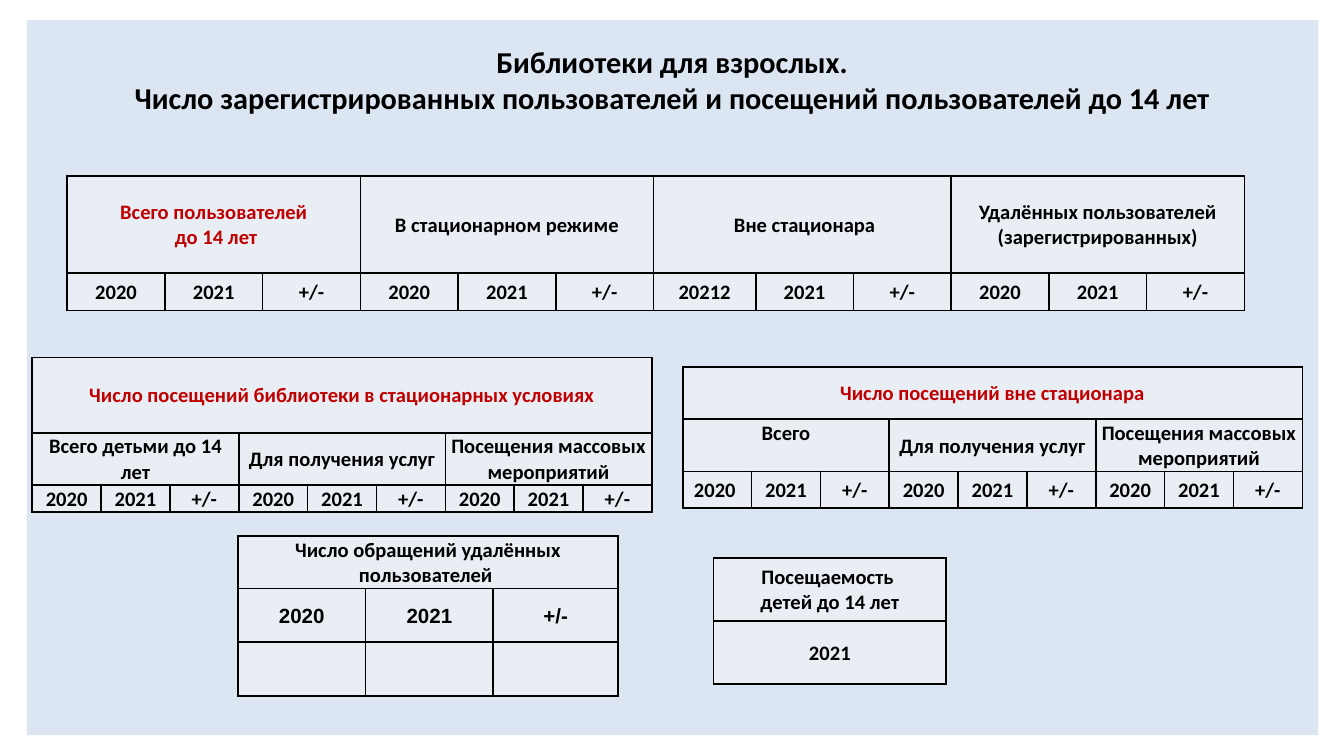
from lxml.etree import SubElement
from pptx import Presentation
from pptx.dml.color import RGBColor
from pptx.enum.shapes import MSO_SHAPE as SHAPE
from pptx.enum.text import MSO_ANCHOR as ANCHOR, MSO_AUTO_SIZE as AUTO, PP_ALIGN as ALIGN
from pptx.oxml.ns import qn
from pptx.util import Inches, Pt

WIDTH = 10
HEIGHT = WIDTH * 9 / 16
BLACK, RED, PANEL, CELL = "000000", "C00000", "DCE6F2", "E9EDF4"
TITLE = (" Библиотеки для взрослых. \v"
         "Число зарегистрированных пользователей и посещений пользователей до 14 лет")
YEARS = ["2020", "2021", "+/-"]
SERVICES = ["Для получения услуг", "Посещения массовых мероприятий"]

# A row with fewer entries than columns is spread over equal merged spans.
# "red" and "top" hold the (row, entry) places with that look.
TABLES = [
    {"at": (0.5, 1.31), "heights": (0.72, 0.28),
     "widths": [8 / 11] * 6 + [0.76] + [8 / 11] * 5, "red": {(0, 0)},
     "rows": [["Всего пользователей\n до 14 лет", "В стационарном режиме",
               " Вне стационара", "Удалённых пользователей\n(зарегистрированных)"],
              YEARS * 2 + ["20212"] + YEARS[1:] + YEARS]},
    {"at": (5.31, 4.15), "heights": (0.47, 0.47), "widths": [1.73],
     "rows": [["Посещаемость \nдетей до 14 лет"], ["2021"]]},
    {"at": (0.24, 2.66), "heights": (0.56, 0.39, 0.2),
     "widths": [4.61 / 9] * 9, "red": {(0, 0)},
     "rows": [["Число посещений библиотеки в стационарных условиях"],
              ["Всего детьми до 14 лет"] + SERVICES, YEARS * 3]},
    {"at": (5.08, 2.73), "heights": (0.39, 0.39, 0.27),
     "widths": [4.61 / 9] * 9, "red": {(0, 0)}, "top": {(1, 0)},
     "rows": [["Число посещений вне стационара"], ["Всего"] + SERVICES,
              ["2020 "] + YEARS[1:] + YEARS * 2]},
    {"at": (1.77, 3.99), "heights": (0.38, 0.4, 0.4),
     "widths": [0.95, 0.95, 0.93], "arial_row": 1,
     "rows": [["Число обращений удалённых пользователей "], YEARS, [""] * 3]},
]


def rgb(value):
    return RGBColor.from_string(value)


def paint(target, color):
    target.fill.solid()
    target.fill.fore_color.rgb = rgb(color)


def write(tf, text, size, color=BLACK, font="Calibri"):
    tf.text = text
    for p in tf.paragraphs:
        p.alignment = ALIGN.CENTER
        for r in p.runs:
            for name, value in {"name": font, "size": Pt(size), "bold": True}.items():
                setattr(r.font, name, value)
            r.font.color.rgb = rgb(color)


def style_cell(cell):
    """Draw thin black borders, then set the fill and the margins."""
    tc_pr = cell._tc.get_or_add_tcPr()
    for side in "LRTB":
        ln = SubElement(tc_pr, qn(f"a:ln{side}"), w=str(Pt(1)))
        fill = SubElement(ln, qn("a:solidFill"))
        SubElement(fill, qn("a:srgbClr"), val=BLACK)
    paint(cell, CELL)
    for side in ("left", "right", "top"):
        setattr(cell, f"margin_{side}", Inches(0.01))
    cell.margin_bottom = 0
    cell.vertical_anchor = ANCHOR.MIDDLE


def add_grid(s, at, widths, heights, rows, red=(), top=(), arial_row=None):
    size = sum(widths), sum(heights)
    table = s.shapes.add_table(len(rows), len(widths),
                               *map(Inches, at + size)).table
    table.first_row = table.horz_banding = False
    for col, width in zip(table.columns, widths):
        col.width = Inches(width)
    for row, height in zip(table.rows, heights):
        row.height = Inches(height)
    for cell in table.iter_cells():
        style_cell(cell)
    for i, entries in enumerate(rows):
        span = len(widths) // len(entries)
        for j, text in enumerate(entries):
            cell = table.cell(i, j * span)
            if span > 1:
                cell.merge(table.cell(i, (j + 1) * span - 1))
            if (i, j) in top:
                cell.vertical_anchor = ANCHOR.TOP
            write(cell.text_frame, text, 11, RED if (i, j) in red else BLACK,
                  "Arial" if i == arial_row else "Calibri")


prs = Presentation()
prs.slide_width, prs.slide_height = Inches(WIDTH), Inches(HEIGHT)
s = prs.slides.add_slide(prs.slide_layouts[5])

panel = s.shapes.add_shape(SHAPE.RECTANGLE, *map(Inches, (0.2, 0.15, 9.61, 5.32)))
panel.shadow.inherit = False
panel.line.fill.background()
paint(panel, PANEL)

title = s.shapes.title
title._element.addprevious(panel._element)
title.left, title.top, title.width, title.height = map(Inches, (0.5, 0.27, 9, 0.64))
paint(title, PANEL)
write(title.text_frame, TITLE, 16.2)
title.text_frame.auto_size = AUTO.NONE
title.text_frame.vertical_anchor = ANCHOR.MIDDLE

for spec in TABLES:
    add_grid(s, **spec)

prs.save("out.pptx")
